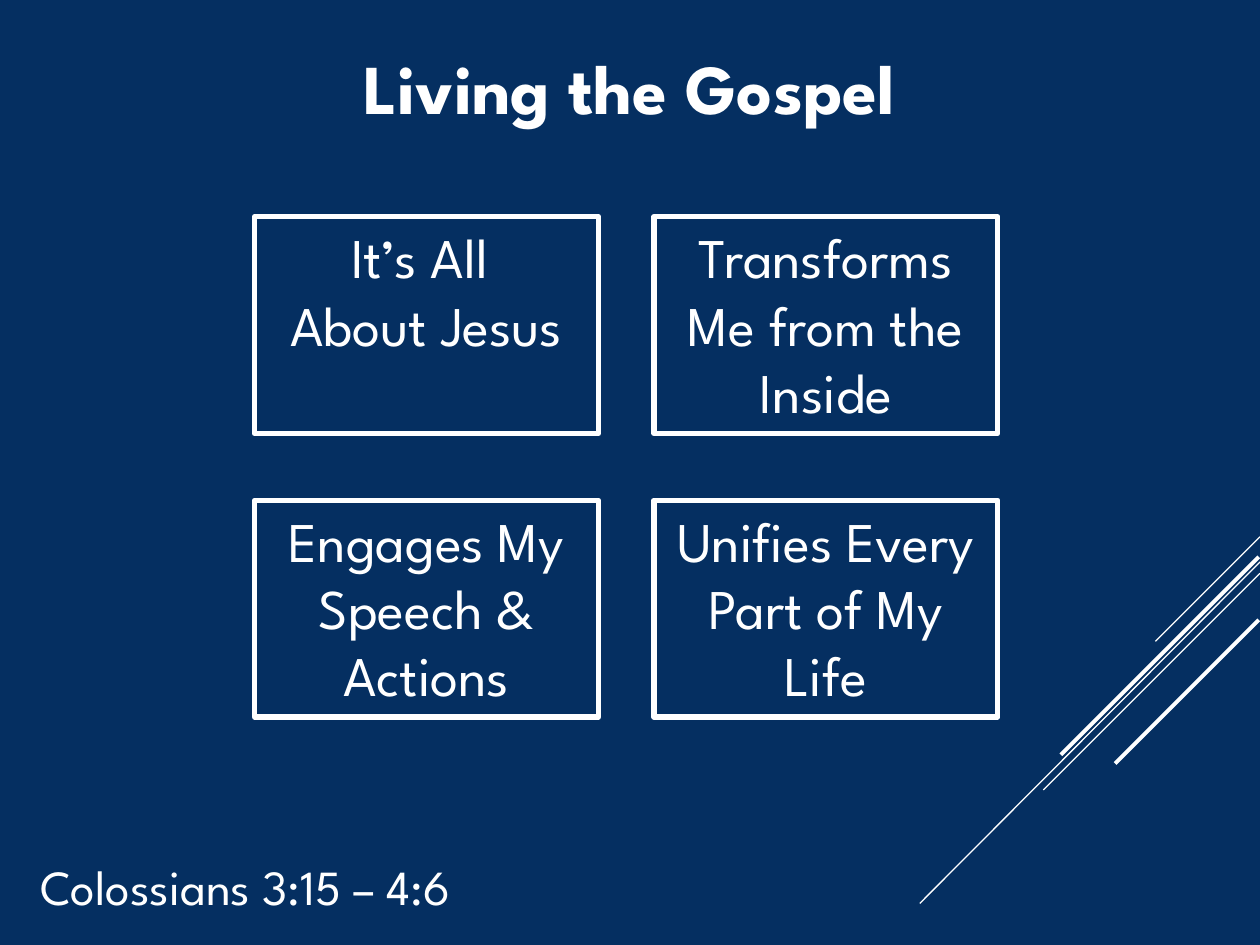
import pptx
import pptx.dml.color
import pptx.enum.shapes
import pptx.enum.text
import pptx.util
import lxml.etree

WIDE, HIGH = 10, 7.5
FONT = "League Spartan"
HUES = {"navy": "052F61", "white": "FFFFFF"}

# Grid of boxes: first corner, step from box to box, and box size
LEFT, TOP = 2.02, 1.72
STEP_X, STEP_Y = 3.17, 2.25
BOX_W, BOX_H = 2.73, 1.72

BOXES = [
    [["It’s All ", "About Jesus"], ["Transforms Me from the Inside"]],
    [["Engages My Speech & Actions"], ["Unifies Every Part of My Life"]],
]

# Diagonal rays: right end x, y, left end x, y, width in points
RAYS = [
    (10, 4.26, 9.17, 5.09, 0.75),
    (10, 4.46, 7.3, 7.17, 0.75),
    (10, 4.55, 8.28, 6.27, 0.75),
    (9.99, 4.42, 8.42, 5.99, 2.25),
    (9.99, 4.92, 8.85, 6.06, 2.25),
]


def hue(name):
    return pptx.dml.color.RGBColor.from_string(HUES[name])


def inches(*sizes):
    return [pptx.util.Inches(size) for size in sizes]


def write(shape, *lines, size, align="LEFT", bold=False):
    """Fill a shape with one paragraph for each line."""
    frame = shape.text_frame
    frame.word_wrap = True
    frame.auto_size = pptx.enum.text.MSO_AUTO_SIZE.SHAPE_TO_FIT_TEXT
    frame.vertical_anchor = pptx.enum.text.MSO_ANCHOR.TOP
    frame.text = "\n".join(lines)
    for para in frame.paragraphs:
        para.alignment = getattr(pptx.enum.text.PP_ALIGN, align)
        for run in para.runs:
            run.font.name = FONT
            run.font.size = pptx.util.Pt(size)
            run.font.bold = bold
            run.font.color.rgb = hue("white")


def add_ray(slide, x1, y1, x2, y2, width):
    ray = slide.shapes.add_connector(
        pptx.enum.shapes.MSO_CONNECTOR.STRAIGHT, *inches(x1, y1, x2, y2))
    ray.line.color.rgb = hue("white")
    ray.line.width = pptx.util.Pt(width)
    props = ray._element.spPr
    lxml.etree.SubElement(props, pptx.oxml.ns.qn("a:effectLst"))


def set_title(slide, text):
    title = slide.shapes.title
    title.left, title.top, title.width, title.height = inches(
        2.37, 0.3, 5.25, 0.77)
    write(title, text, size=40, align="CENTER", bold=True)


def add_box(slide, row, col, lines):
    box = slide.shapes.add_shape(
        pptx.enum.shapes.MSO_SHAPE.RECTANGLE,
        *inches(LEFT + col * STEP_X, TOP + row * STEP_Y, BOX_W, BOX_H))
    box.shadow.inherit = False
    box.fill.solid()
    box.fill.fore_color.rgb = hue("navy")
    box.line.color.rgb = hue("white")
    box.line.width = pptx.util.Pt(3)
    write(box, *lines, size=32, align="CENTER")


def main():
    deck = pptx.Presentation()
    deck.slide_width, deck.slide_height = inches(WIDE, HIGH)
    slide = deck.slides.add_slide(deck.slide_layouts.get_by_name("Title Only"))
    slide.background.fill.solid()
    slide.background.fill.fore_color.rgb = hue("navy")

    for ray in RAYS:
        add_ray(slide, *ray)
    set_title(slide, "Living the Gospel")
    for row, cells in enumerate(BOXES):
        for col, lines in enumerate(cells):
            add_box(slide, row, col, lines)
    verse = slide.shapes.add_textbox(*inches(0.22, 6.75, 4.63, 0.57))
    write(verse, "Colossians 3:15 – 4:6", size=28)

    deck.save("out.pptx")


if __name__ == "__main__":
    main()
